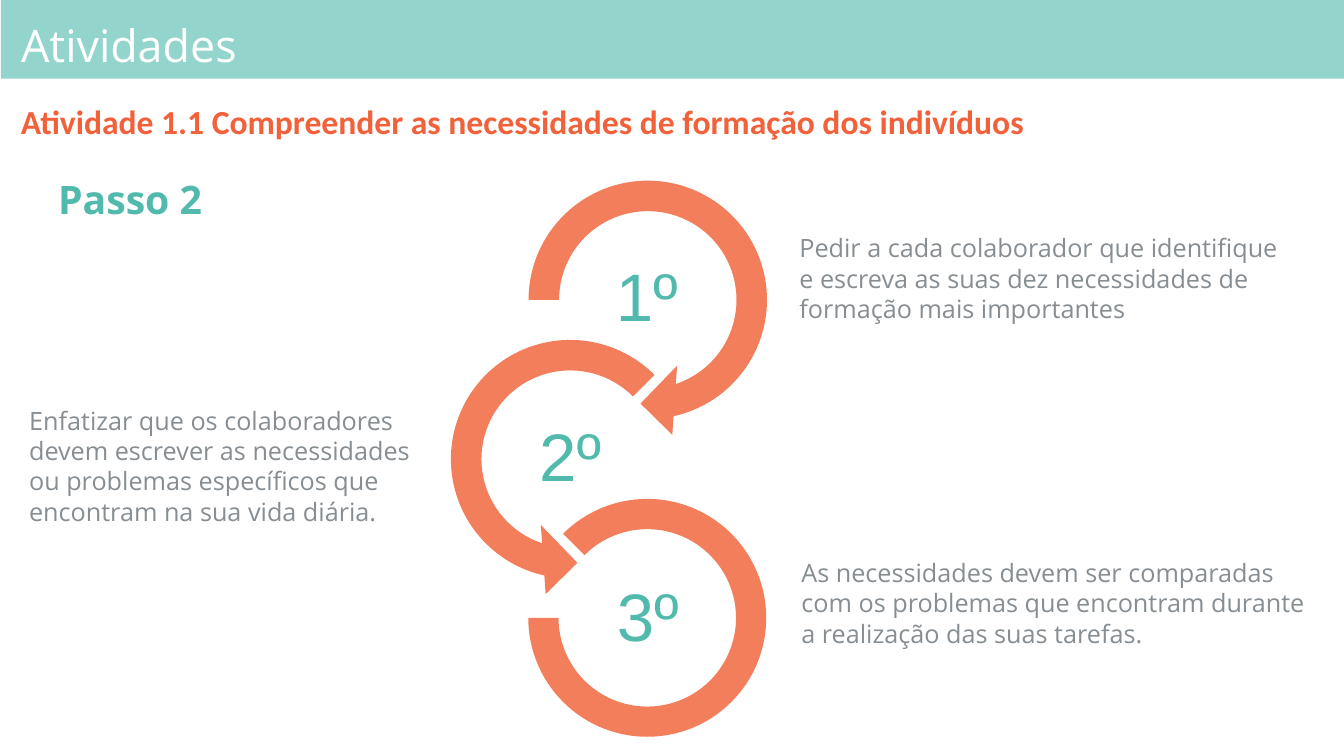
from pptx import Presentation
from pptx.dml.color import RGBColor
from pptx.enum.shapes import MSO_SHAPE
from pptx.enum.text import MSO_ANCHOR, MSO_AUTO_SIZE, PP_ALIGN
from pptx.util import Inches, Pt

LEFT, CENTER, JUSTIFY = PP_ALIGN.LEFT, PP_ALIGN.CENTER, PP_ALIGN.JUSTIFY
TOP, MIDDLE = MSO_ANCHOR.TOP, MSO_ANCHOR.MIDDLE
NO_FIT, GROW = MSO_AUTO_SIZE.NONE, MSO_AUTO_SIZE.SHAPE_TO_FIT_TEXT
RECTANGLE, BLOCK_ARC = MSO_SHAPE.RECTANGLE, MSO_SHAPE.BLOCK_ARC
RIGHT_TURN, LEFT_TURN = MSO_SHAPE.CIRCULAR_ARROW, MSO_SHAPE.LEFT_CIRCULAR_ARROW

AQUA, TEAL, ORANGE, CORAL = "93D4CC", "52BAAD", "F2613A", "F27E5C"
GREY, WHITE = "868E93", "FFFFFF"

# Ring kind, left, top, size, adjustments; then the left of its number
RINGS = [
    (RIGHT_TURN, 5.05, 1.6, 2.75, (0.11, 11.42, 45, 108, 0.125), 5.65),
    (LEFT_TURN, 4.28, 3.18, 2.75, (0.11, 11.42, 63, 189, 0.125), 4.89),
    (BLOCK_ARC, 5.24, 4.95, 2.36, (135, 108, 0.127), 5.66),
]
NUMBER_TOP, NUMBER_STEP = 2.59, 1.59

# Left, top, width, height, wording
EXPLANATIONS = [
    (7.83, 2.26, 5.1, 1.01, "Pedir a cada colaborador que identifique e escreva as suas "
                            "dez necessidades de formação mais importantes"),
    (0.19, 3.97, 4.31, 1.31, "Enfatizar que os colaboradores devem escrever as necessidades "
                             "ou problemas específicos que encontram na sua vida diária."),
    (7.85, 5.48, 5.25, 1.01, "As necessidades devem ser comparadas com os problemas que "
                             "encontram durante a realização das suas tarefas."),
]


def rgb(color):
    return RGBColor.from_string(color)


def write(holder, text, size, font, color, bold=False, align=LEFT, anchor=TOP,
          spacing=0.9, margins=(0.1, 0.05, 0.1, 0.05), fit=NO_FIT):
    frame = holder.text_frame
    frame.word_wrap = True
    frame.auto_size = fit
    frame.vertical_anchor = anchor
    (frame.margin_left, frame.margin_top,
     frame.margin_right, frame.margin_bottom) = map(Inches, margins)
    paragraph = frame.paragraphs[0]
    paragraph.alignment = align
    paragraph.line_spacing = spacing
    paragraph.space_before = Pt(0)
    run = paragraph.add_run()
    run.text = text
    run.font.size = Pt(size)
    run.font.name = font
    run.font.bold = bold
    run.font.color.rgb = rgb(color)


def add_text(shapes, box, text, size, font, color, **style):
    holder = shapes.add_textbox(*map(Inches, box))
    write(holder, text, size, font, color, **style)


def add_solid(shapes, kind, box, color, adjustments=()):
    solid = shapes.add_shape(kind, *map(Inches, box))
    for index, value in enumerate(adjustments):
        solid.adjustments[index] = value
    solid.fill.solid()
    solid.fill.fore_color.rgb = rgb(color)
    solid.line.fill.background()
    solid.shadow.inherit = False
    return solid


def add_title(slide, text):
    title = slide.shapes.title
    title.left, title.top, title.width, title.height = map(Inches, (0.11, 0.09, 13.06, 0.78))
    write(title, text, 32, "Open Sans", WHITE, anchor=MIDDLE,
          margins=(0.1, 0.06, 0.06, 0.06))
    # The band lies behind the title
    band = add_solid(slide.shapes, RECTANGLE, (0.01, 0, 13.33, 0.78), AQUA)
    title._element.addprevious(band._element)


def add_ring_chain(slide):
    chain = slide.shapes.add_group_shape().shapes
    for index, (kind, left, top, size, adjustments, number_left) in enumerate(RINGS):
        add_solid(chain, kind, (left, top, size, size), CORAL, adjustments)
        number_box = (number_left, NUMBER_TOP + index * NUMBER_STEP, 1.53, 0.76)
        add_text(chain, number_box, f"{index + 1}º", 48, "Arial", TEAL,
                 align=CENTER, anchor=MIDDLE, margins=(0.03,) * 4)


def main():
    deck = Presentation()
    deck.slide_width, deck.slide_height = Inches(13.33), Inches(7.5)
    slide = deck.slides.add_slide(deck.slide_layouts[5])

    # Headings
    add_title(slide, "Atividades")
    add_text(slide.shapes, (0.11, 0.93, 13.06, 0.6),
             "Atividade 1.1 Compreender as necessidades de formação dos indivíduos",
             24, "Calibri", ORANGE, bold=True, align=JUSTIFY, anchor=MIDDLE)

    # Numbered rings and their explanations
    add_ring_chain(slide)
    for *box, text in EXPLANATIONS:
        add_text(slide.shapes, box, text, 18, "Open Sans", GREY, spacing=1.0, fit=GROW)

    # Step label
    add_text(slide.shapes, (0.19, 1.74, 2.2, 0.53), "Passo 2", 28, "Open Sans", TEAL,
             bold=True, align=CENTER, fit=GROW)

    deck.save("out.pptx")


if __name__ == "__main__":
    main()
